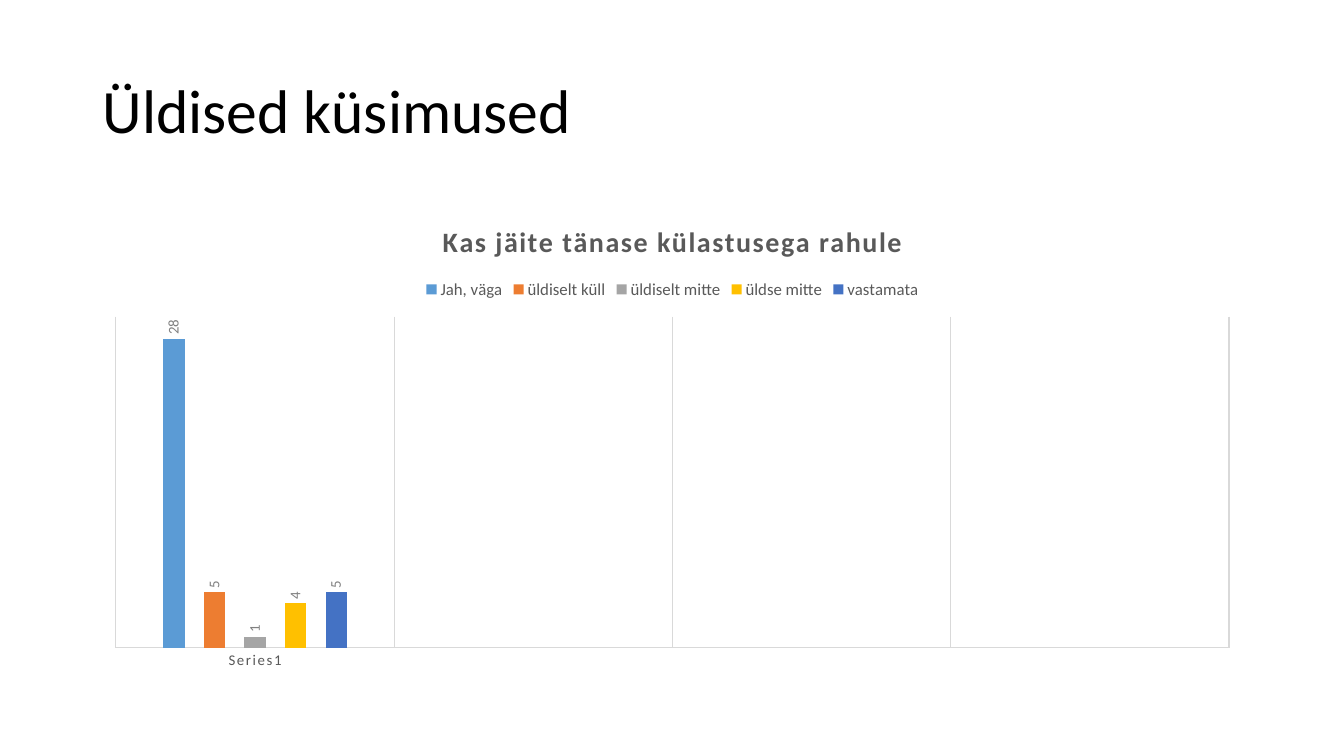
"""Build a survey slide with a clustered column chart of visitor satisfaction."""
from dataclasses import dataclass

from lxml import etree
from pptx import Presentation
from pptx import util as u
from pptx.chart import data as chart_data
from pptx.dml import color
from pptx.enum import chart as charts
from pptx.enum import text
from pptx.oxml import ns


@dataclass(frozen=True)
class Theme:
    font: str = "Calibri"
    heading: str = "000000"
    ink: str = "595959"
    value: str = "808080"
    rule: str = "D9D9D9"
    heading_size: float = 44
    chart_title_size: float = 20
    legend_size: float = 12
    label_size: float = 10.6
    rule_width: float = 0.75


@dataclass(frozen=True)
class Answer:
    name: str
    count: int
    fill: str


THEME = Theme()
CATEGORIES = ("Series1", "", "", "")
ANSWERS = (
    Answer("Jah, väga", 28, "5B9BD5"),
    Answer("üldiselt küll", 5, "ED7D31"),
    Answer("üldiselt mitte", 1, "A5A5A5"),
    Answer("üldse mitte", 4, "FFC000"),
    Answer("vastamata", 5, "4472C4"),
)
PLOT_LAYOUT = {"x": 0.02, "y": 0.24, "w": 0.96, "h": 0.69}


def style_font(font, *, size: float, ink: str, bold: bool = False) -> None:
    """Apply the theme typeface with a size, colour and weight."""
    font.name = THEME.font
    font.size = u.Pt(size)
    font.bold = bold
    font.color.rgb = color.RGBColor.from_string(ink)


def write(frame, words: str, *, size: float, ink: str, bold: bool = False,
          line_spacing: float | None = None, tracking: int = 0) -> None:
    """Write one formatted paragraph into a text frame."""
    para = frame.paragraphs[0]
    para.line_spacing = line_spacing
    span = para.add_run()
    span.text = words
    style_font(span.font, size=size, ink=ink, bold=bold)
    if tracking:
        span.font._element.set("spc", str(tracking))


def style_line(line) -> None:
    """Give a chart line the thin grey rule format."""
    line.width = u.Pt(THEME.rule_width)
    line.color.rgb = color.RGBColor.from_string(THEME.rule)


def place_plot(chart) -> None:
    """Fix the inner plot area as fractions of the chart."""
    area = chart._chartSpace.chart.plotArea
    for old in area.findall(ns.qn("c:layout")):
        area.remove(old)
    layout = etree.Element(ns.qn("c:layout"))
    manual = etree.SubElement(layout, ns.qn("c:manualLayout"))
    settings = {"layoutTarget": "inner", "xMode": "edge", "yMode": "edge"} | PLOT_LAYOUT
    for tag, setting in settings.items():
        etree.SubElement(manual, ns.qn(f"c:{tag}")).set("val", str(setting))
    area.insert(0, layout)


def format_axes(chart) -> None:
    """Show ruled categories and hide the value axis."""
    category = chart.category_axis
    category.major_tick_mark = charts.XL_TICK_MARK.NONE
    category.has_major_gridlines = True
    style_line(category.major_gridlines.format.line)
    style_line(category.format.line)
    font = category.tick_labels.font
    style_font(font, size=THEME.label_size, ink=THEME.ink)
    font._element.set("spc", "120")
    value = chart.value_axis
    value.minimum_scale, value.maximum_scale = 0, 30
    value.has_major_gridlines = False
    value.visible = False


def format_series(series, answer: Answer) -> None:
    """Colour a series and put upright values above its columns."""
    series.format.fill.solid()
    series.format.fill.fore_color.rgb = color.RGBColor.from_string(answer.fill)
    series.invert_if_negative = False
    labels = series.data_labels
    labels.show_value = True
    labels.position = charts.XL_LABEL_POSITION.OUTSIDE_END
    style_font(labels.font, size=THEME.label_size, ink=THEME.value)
    body = labels._element.find(f"{ns.qn('c:txPr')}/{ns.qn('a:bodyPr')}")
    body.set("rot", "-5400000")
    body.set("vert", "horz")


def add_answer_chart(page) -> None:
    """Add the column chart with its title and legend."""
    table = chart_data.CategoryChartData()
    table.categories = CATEGORIES
    for answer in ANSWERS:
        table.add_series(answer.name, [answer.count] + [None] * (len(CATEGORIES) - 1))
    chart = page.shapes.add_chart(
        charts.XL_CHART_TYPE.COLUMN_CLUSTERED, u.Inches(0.92), u.Inches(2),
        u.Inches(11.5), u.Inches(4.76), table).chart
    style_font(chart.font, size=10, ink=THEME.heading)
    chart.has_title = True
    write(chart.chart_title.text_frame, "Kas jäite tänase külastusega rahule",
          size=THEME.chart_title_size, ink=THEME.ink, bold=True, tracking=100)
    chart.has_legend = True
    chart.legend.position = charts.XL_LEGEND_POSITION.TOP
    chart.legend.include_in_layout = False
    style_font(chart.legend.font, size=THEME.legend_size, ink=THEME.ink)
    plot = chart.plots[0]
    plot.gap_width, plot.overlap, plot.vary_by_categories = 444, -90, False
    for series, answer in zip(plot.series, ANSWERS):
        format_series(series, answer)
    format_axes(chart)
    place_plot(chart)


def add_heading(page) -> None:
    """Add the slide heading."""
    box = page.shapes.add_textbox(u.Inches(0.92), u.Inches(0.4), u.Inches(11.5), u.Inches(1.45))
    frame = box.text_frame
    frame.word_wrap = True
    frame.vertical_anchor = text.MSO_ANCHOR.MIDDLE
    write(frame, "Üldised küsimused", size=THEME.heading_size, ink=THEME.heading,
          line_spacing=0.9)


def main() -> None:
    """Build and save the deck."""
    deck = Presentation()
    deck.slide_width, deck.slide_height = u.Inches(13.33), u.Inches(7.5)
    page = deck.slides.add_slide(deck.slide_layouts[6])
    add_heading(page)
    add_answer_chart(page)
    deck.save("out.pptx")


if __name__ == "__main__":
    main()
